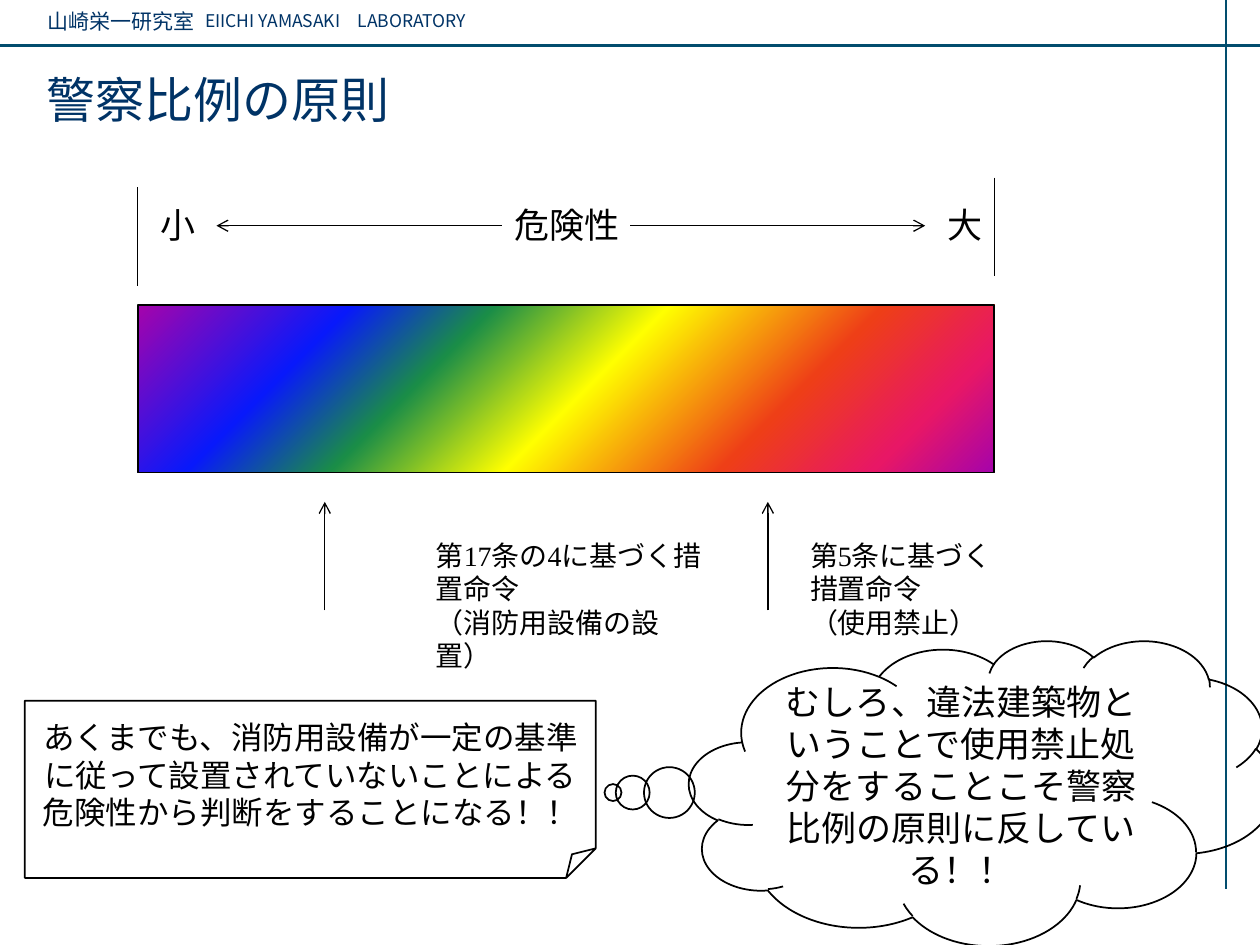
from dataclasses import dataclass

from lxml.etree import SubElement
from pptx import Presentation
from pptx.dml.color import RGBColor
from pptx.enum.shapes import MSO_CONNECTOR, MSO_SHAPE
from pptx.enum.text import MSO_ANCHOR, PP_ALIGN
from pptx.oxml.ns import qn
from pptx.util import Pt


@dataclass(frozen=True)
class Theme:
    ink: str = "000000"
    navy: str = "003366"
    rule: str = "024D6E"
    pale: str = "EEEEEE"
    serif: str = "Times New Roman"
    sans: str = "Noto Sans CJK JP"
    small: int = 10
    lab: int = 12
    note: int = 16
    remark: int = 18
    label: int = 20
    title: int = 28
    thin: float = 0.75
    outline: float = 1
    thick: float = 1.5
    spectrum: tuple = ((0, "A603AB"), (21, "0819FB"), (35, "1A8D48"), (52, "FFFF00"),
                       (73, "EE3F17"), (88, "E81766"), (100, "A603AB"))


@dataclass(frozen=True)
class Box:
    left: float
    top: float
    width: float
    height: float

    def inner(self, dx, dy, width, height):
        return Box(self.left + dx, self.top + dy, width, height)

    def lengths(self):
        return [Pt(v) for v in (self.left, self.top, self.width, self.height)]


THEME = Theme()


def write(shape, text, size=THEME.label, color=THEME.ink, font=THEME.serif,
          align=PP_ALIGN.LEFT, anchor=MSO_ANCHOR.TOP):
    frame = shape.text_frame
    frame.word_wrap = True
    frame.vertical_anchor = anchor
    for index, line in enumerate(text.split("\n")):
        para = frame.add_paragraph() if index else frame.paragraphs[0]
        para.alignment = align
        span = para.add_run()
        span.text = line
        span.font.size = Pt(size)
        span.font.name = font
        span.font.color.rgb = RGBColor.from_string(color)
        # East Asian glyphs
        SubElement(span._r.get_or_add_rPr(), qn("a:ea")).set("typeface", THEME.sans)


def add_text(page, box, text, **style):
    shape = page.shapes.add_textbox(*box.lengths())
    write(shape, text, **style)
    return shape


def add_outlined(page, kind, box):
    shape = page.shapes.add_shape(kind, *box.lengths())
    shape.shadow.inherit = False
    shape.fill.background()
    shape.line.color.rgb = RGBColor.from_string(THEME.ink)
    shape.line.width = Pt(THEME.outline)
    return shape


def add_line(page, x1, y1, x2, y2, color=THEME.ink, width=THEME.thin, arrow=False):
    line = page.shapes.add_connector(
        MSO_CONNECTOR.STRAIGHT, Pt(x1), Pt(y1), Pt(x2), Pt(y2))
    line.line.color.rgb = RGBColor.from_string(color)
    line.line.width = Pt(width)
    properties = line._element.spPr
    if arrow:
        SubElement(properties.find(qn("a:ln")), qn("a:tailEnd")).set("type", "arrow")
    SubElement(properties, qn("a:effectLst"))
    return line


def paint_spectrum(shape):
    shape.fill.gradient()
    shape.fill.gradient_angle = 315
    stops = shape._element.spPr.find(".//" + qn("a:gsLst"))
    for stop in list(stops):
        stops.remove(stop)
    for percent, color in THEME.spectrum:
        stop = SubElement(stops, qn("a:gs"), pos=str(percent * 1000))
        SubElement(stop, qn("a:srgbClr"), val=color)


def build_frame(page, box):
    """Laboratory header, rules along the edges and the title."""
    add_text(page, box.inner(20.2, 1.5, 221, 21.6), "山崎栄一研究室",
             size=THEME.lab, color=THEME.navy)
    add_line(page, box.left, box.top + 26.1, box.left + box.width, box.top + 26.1,
             color=THEME.rule, width=THEME.thick)
    add_text(page, box.inner(110.2, 2.2, 408, 19.4), "EIICHI YAMASAKI　LABORATORY",
             size=THEME.small, color=THEME.navy, font=THEME.sans)
    edge = box.left + 700.2
    add_line(page, edge, box.top + 31.7, edge, box.top, color=THEME.pale)
    add_line(page, edge + 0.4, box.top, edge + 0.4, box.top + 508, color=THEME.rule)
    add_text(page, box.inner(19.5, 36, 663, 41), "警察比例の原則",
             size=THEME.title, color=THEME.navy, font=THEME.sans)


def build_scale(page, box):
    """Danger scale: labels and arrows above a spectrum bar."""
    right = box.left + box.width
    bar = add_outlined(page, MSO_SHAPE.RECTANGLE,
                       box.inner(0, 72.7, box.width, box.height - 72.7))
    paint_spectrum(bar)

    # End marks
    for x, top in ((box.left, box.top + 5.4), (right, box.top)):
        add_line(page, x, top, x, top + 56.4)

    # Labels
    label = add_text(page, box.inner(208, 11.5, 78.5, 32), "危険性")
    add_text(page, box.inner(5.8, 11.5, 34, 32), "小")
    add_text(page, box.inner(box.width - 34, 11.5, 34, 32), "大")

    # Arrows towards both ends
    middle = box.top + 27.5
    to_small = add_line(page, box.left + 208, middle, box.left + 45, middle, arrow=True)
    to_small.begin_connect(label, 1)
    add_line(page, box.left + 281.5, middle, box.left + 450, middle, arrow=True)


def build_order(page, box, text, indent):
    """Arrow up to the spectrum with the order written beside it."""
    add_line(page, box.left, box.top + 62, box.left, box.top, arrow=True)
    add_text(page, box.inner(indent, 17.2, box.width - indent, box.height - 17.2),
             text, size=THEME.note)


def build_remark(page, box, kind, text, size, pointer=()):
    """Outlined shape with a centred remark."""
    shape = add_outlined(page, kind, box)
    for index, value in enumerate(pointer):
        shape.adjustments[index] = value
    write(shape, text, size=size, align=PP_ALIGN.CENTER, anchor=MSO_ANCHOR.MIDDLE)


def main():
    deck = Presentation()
    deck.slide_width, deck.slide_height = Pt(720), Pt(540)
    page = deck.slides.add_slide(deck.slide_layouts[6])

    build_frame(page, Box(0, 0, 720, 540))
    build_scale(page, Box(78.7, 101.5, 489.5, 168.5))
    build_order(page, Box(185.6, 286.8, 224.9, 82.7),
                "第17条の4に基づく措置命令\n（消防用設備の設置）", indent=56.4)
    build_order(page, Box(438.8, 286.8, 140.8, 82.7),
                "第5条に基づく措置命令\n（使用禁止）", indent=17)
    build_remark(page, Box(14.2, 400.4, 326.2, 101.3), MSO_SHAPE.FOLDED_CORNER,
                 "あくまでも、消防用設備が一定の基準に従って設置されていないことによる"
                 "危険性から判断をすることになる！！", THEME.remark)
    build_remark(page, Box(393.8, 365.8, 334.8, 174.2), MSO_SHAPE.CLOUD_CALLOUT,
                 "むしろ、違法建築物ということで使用禁止処分をすることこそ"
                 "警察比例の原則に反している！！", THEME.label, pointer=(-0.63, 0))

    deck.save("out.pptx")


if __name__ == "__main__":
    main()
